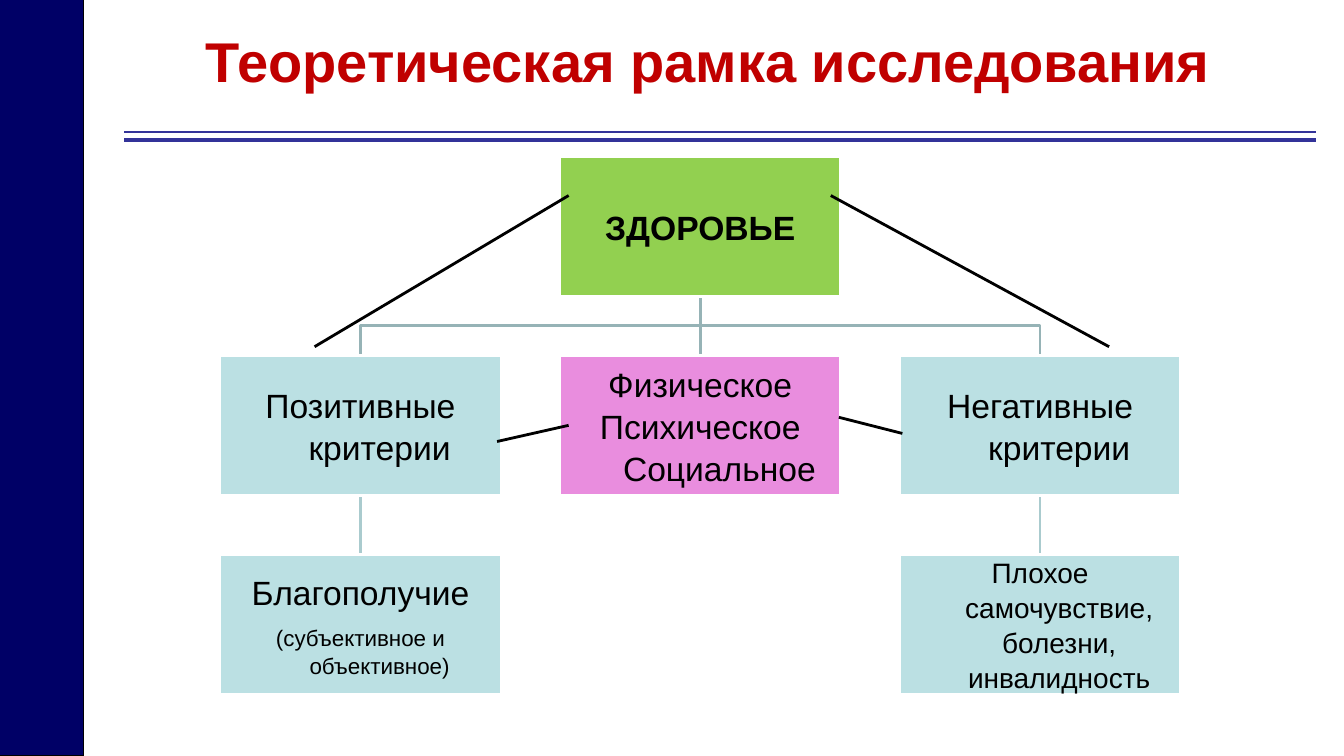
import pptx
import pptx.util
from pptx.dml.color import RGBColor
from pptx.enum.shapes import MSO_CONNECTOR, MSO_SHAPE
from pptx.enum.text import MSO_ANCHOR, PP_ALIGN
from pptx.oxml.ns import qn
from lxml import etree

Inches = pptx.util.Inches
Pt = pptx.util.Pt

BLACK = RGBColor(0x00, 0x00, 0x00)
WHITE = RGBColor(0xFF, 0xFF, 0xFF)
NAVY = RGBColor(0x00, 0x00, 0x66)
INDIGO = RGBColor(0x33, 0x33, 0x99)
RED = RGBColor(0xC0, 0x00, 0x00)
GREEN = RGBColor(0x92, 0xD0, 0x50)
PINK = RGBColor(0xE9, 0x8D, 0xDE)
PALE_TEAL = RGBColor(0xBB, 0xE0, 0xE3)
UPPER_BRANCH = RGBColor(0x96, 0xB3, 0xB6)
LOWER_BRANCH = RGBColor(0xAA, 0xCB, 0xCE)

SLIDE_W, SLIDE_H = 13.33, 7.5
BOX_W, BOX_H = 2.79, 1.39
COLUMN_STEP, ROW_STEP = 3.37, 1.975
HANGING = 0.38

# column, row, fill, inset, [(text, size, bold, space before)]
CONCEPTS = [
    (1, 0, GREEN, 0.02, [("ЗДОРОВЬЕ", 24, True, 0)]),
    (0, 1, PALE_TEAL, 0.02, [("Позитивные критерии", 24, False, 0)]),
    (0, 2, PALE_TEAL, 0.02, [("Благополучие", 24, False, 0),
                             ("(субъективное и объективное)", 16, False, 8)]),
    (1, 1, PINK, 0.02, [("Физическое", 24, False, 0),
                        ("Психическое Социальное", 24, False, 0)]),
    (2, 1, PALE_TEAL, 0.02, [("Негативные критерии", 24, False, 0)]),
    (2, 2, PALE_TEAL, 0.01,
     [("Плохое самочувствие, болезни, инвалидность", 20, False, 0)]),
]

# Ends of the black links, measured from the corner of the diagram
LINKS = [
    ((0.94, 1.89), (3.46, 0.39)),
    ((6.06, 0.39), (8.82, 1.89)),
    ((2.75, 2.83), (3.46, 2.67)),
    ((6.14, 2.59), (6.77, 2.75)),
]


def style_text(paragraph, size, color, bold):
    paragraph.alignment = PP_ALIGN.CENTER
    for run in paragraph.runs:
        run.font.name = "Arial"
        run.font.size = Pt(size)
        run.font.bold = bold
        run.font.color.rgb = color


def add_line(slide, start, end, color, width):
    line = slide.shapes.add_connector(
        MSO_CONNECTOR.STRAIGHT, *(Inches(value) for value in (*start, *end)))
    line.line.color.rgb = color
    line.line.width = Pt(width)
    etree.SubElement(line._element.spPr, qn("a:effectLst"))


def add_rectangle(slide, left, top, width, height, fill, outline, outline_width):
    rectangle = slide.shapes.add_shape(
        MSO_SHAPE.RECTANGLE, Inches(left), Inches(top), Inches(width), Inches(height))
    rectangle.shadow.inherit = False
    rectangle.fill.solid()
    rectangle.fill.fore_color.rgb = fill
    rectangle.line.color.rgb = outline
    rectangle.line.width = Pt(outline_width)
    return rectangle


def add_branch(slide, points, color):
    """Draw an open elbow line through the points."""
    corners = [(Inches(x), Inches(y)) for x, y in points]
    builder = slide.shapes.build_freeform(*corners[0])
    builder.add_line_segments(corners[1:], close=False)
    branch = builder.convert_to_shape()
    branch.shadow.inherit = False
    branch.fill.background()
    branch.line.color.rgb = color
    branch.line.width = Pt(2)


def add_concept(slide, left, top, fill, inset, lines):
    concept = add_rectangle(slide, left, top, BOX_W, BOX_H, fill, WHITE, 2)
    frame = concept.text_frame
    frame.word_wrap = True
    frame.vertical_anchor = MSO_ANCHOR.MIDDLE
    frame.margin_left = frame.margin_right = Inches(inset)
    frame.margin_top = frame.margin_bottom = Inches(inset)
    frame.text = "\n".join(text for text, *_ in lines)
    for paragraph, (_, size, bold, before) in zip(frame.paragraphs, lines):
        style_text(paragraph, size, BLACK, bold)
        paragraph.space_before = Pt(before)
        paragraph.line_spacing = 1.04
        properties = paragraph._p.get_or_add_pPr()
        properties.set("marL", str(Inches(HANGING)))
        properties.set("indent", str(-Inches(HANGING)))


def add_header(slide, left, top, width):
    title = slide.shapes.add_textbox(
        Inches(left), Inches(top), Inches(width - 0.24), Inches(0.77))
    frame = title.text_frame
    frame.word_wrap = True
    frame.vertical_anchor = MSO_ANCHOR.MIDDLE
    frame.text = "Теоретическая рамка исследования"
    style_text(frame.paragraphs[0], 40, RED, True)
    for offset, weight in ((1.1, 1.5), (1.18, 2.5)):
        add_line(slide, (left, top + offset), (left + width, top + offset),
                 INDIGO, weight)


def add_diagram(slide, left, top):
    def center(column):
        return left + column * COLUMN_STEP + BOX_W / 2

    def row_top(row):
        return top + row * ROW_STEP

    def row_bottom(row):
        return row_top(row) + BOX_H

    fork = (row_bottom(0) + row_top(1)) / 2
    for column in (2, 0):
        add_branch(slide, [(center(column), row_bottom(1)),
                           (center(column), row_top(2))], LOWER_BRANCH)
        add_branch(slide, [(center(1), row_bottom(0)), (center(1), fork),
                           (center(column), fork),
                           (center(column), row_top(1))], UPPER_BRANCH)
    add_branch(slide, [(center(1), row_bottom(0)),
                       (center(1), row_top(1))], UPPER_BRANCH)
    for column, row, fill, inset, lines in CONCEPTS:
        add_concept(slide, left + column * COLUMN_STEP, row_top(row),
                    fill, inset, lines)
    for (x1, y1), (x2, y2) in LINKS:
        add_line(slide, (left + x1, top + y1), (left + x2, top + y2), BLACK, 2)


def main():
    deck = pptx.Presentation()
    deck.slide_width, deck.slide_height = Inches(SLIDE_W), Inches(SLIDE_H)
    slide = deck.slides.add_slide(deck.slide_layouts[6])
    add_rectangle(slide, 0, 0, SLIDE_W / 16, SLIDE_H, NAVY, BLACK, 0.75)
    add_header(slide, 1.23, 0.21, 11.82)
    add_diagram(slide, 2.18, 1.55)
    deck.save("out.pptx")


if __name__ == "__main__":
    main()
